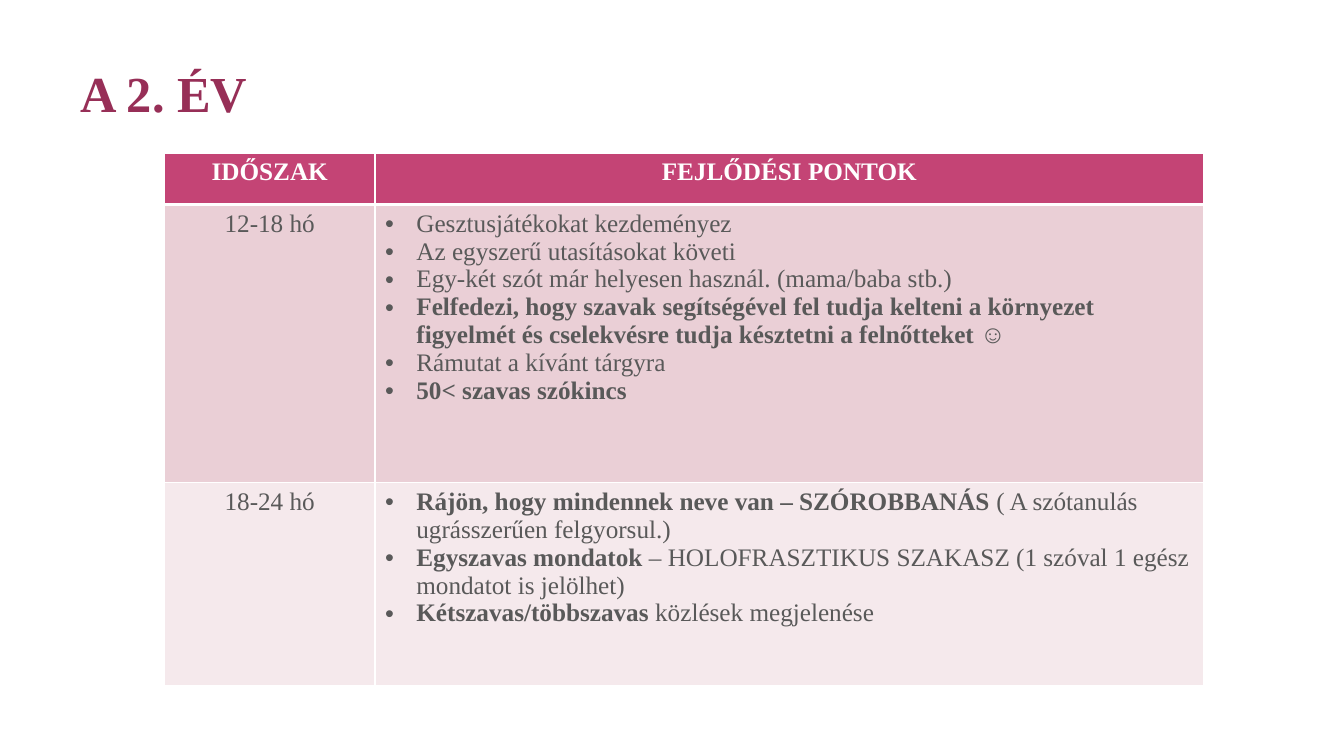
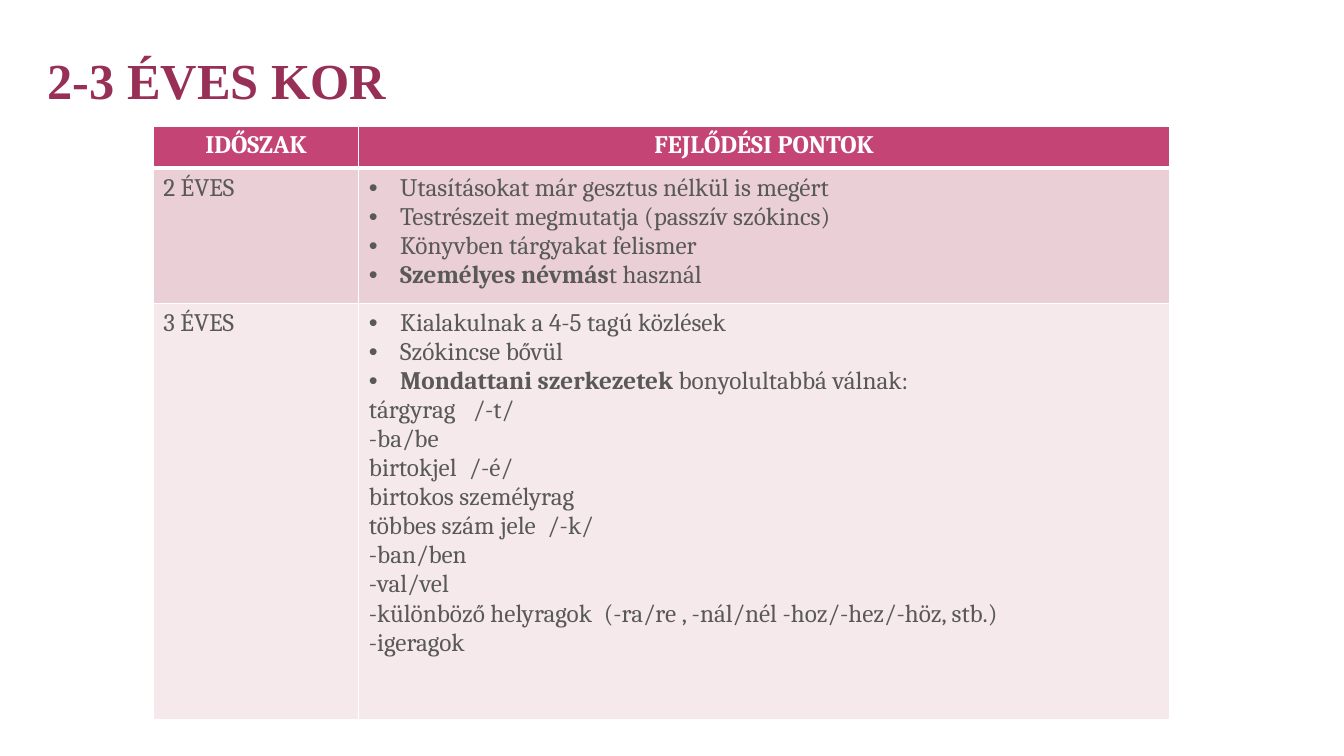
from pptx import Presentation
from pptx.dml.color import RGBColor
from pptx.enum.text import MSO_ANCHOR as Anchor, MSO_AUTO_SIZE as AutoSize, PP_ALIGN as Align
from pptx.oxml.ns import qn
from pptx.util import Inches, Pt
from lxml.etree import SubElement

TITLE_ONLY = 5
SERIF = "Times New Roman"
COLORS = {"title": "972F57", "header": "C44475", "bands": ["EACFD6", "F5E9EC"],
          "text": "595959", "white": "FFFFFF"}
HEADINGS = ["IDŐSZAK", "FEJLŐDÉSI PONTOK"]
INDENT = Inches(0.31)


def rgb(color):
    return RGBColor.from_string(color)


def set_border(cell, side, width):
    """Draw a white line on side L, R, T or B of a cell."""
    line = SubElement(cell._tc.get_or_add_tcPr(), qn(f"a:ln{side}"), w=str(Pt(width)))
    fill = SubElement(line, qn("a:solidFill"))
    SubElement(fill, qn("a:srgbClr"), val=COLORS["white"])


def add_bullet(para):
    properties = para._p.get_or_add_pPr()
    properties.set("marL", str(INDENT))
    properties.set("indent", str(-INDENT))
    SubElement(properties, qn("a:buFont"), typeface="Arial")
    SubElement(properties, qn("a:buChar"), char="•")


def add_tab_stop(para, inches):
    stops = SubElement(para._p.get_or_add_pPr(), qn("a:tabLst"))
    SubElement(stops, qn("a:tab"), pos=str(Inches(inches)), algn="l")


class Deck:
    """The presentation, its style and the current slide; lengths are percent of the slide."""

    def __init__(self):
        self.show = Presentation()
        self.show.slide_width, self.show.slide_height = Inches(13.33), Inches(7.5)

    def across(self, share):
        return round(self.show.slide_width * share / 100)

    def down(self, share):
        return round(self.show.slide_height * share / 100)

    def place(self, left, top, width, height):
        return self.across(left), self.down(top), self.across(width), self.down(height)

    def add_spans(self, para, text, font, size, color, bold=False):
        """Fill a paragraph; ** switches bold on and off."""
        for index, part in enumerate(text.split("**")):
            if part:
                span = para.add_run()
                span.text = part
                style = {"name": font, "size": Pt(size), "bold": bold or index % 2 == 1}
                for key, value in style.items():
                    setattr(span.font, key, value)
                span.font.color.rgb = rgb(color)

    def add_page(self, title, place):
        self.page = self.show.slides.add_slide(self.show.slide_layouts[TITLE_ONLY])
        box = self.page.shapes.title
        box.left, box.top, box.width, box.height = self.place(*place)
        frame = box.text_frame
        frame_style = {"word_wrap": True, "auto_size": AutoSize.NONE,
                       "vertical_anchor": Anchor.BOTTOM}
        for key, value in frame_style.items():
            setattr(frame, key, value)
        para = frame.paragraphs[0]
        para.alignment, para.line_spacing = Align.LEFT, 0.9
        self.add_spans(para, title, SERIF, 36, COLORS["title"], bold=True)

    def fill_cell(self, cell, lines, fill, color, font, align, bold=False):
        cell.fill.solid()
        cell.fill.fore_color.rgb = rgb(fill)
        frame = cell.text_frame
        for index, line in enumerate(lines):
            para = frame.add_paragraph() if index else frame.paragraphs[0]
            text, stop = line if isinstance(line, tuple) else (line, None)
            if text.startswith("• "):
                add_bullet(para)
                text = text[2:]
            if stop:
                add_tab_stop(para, stop)
            para.alignment = align
            self.add_spans(para, text, font, 18, color, bold)

    def add_periods(self, left, top, columns, rows, periods, font, period_align):
        """Add a table with a period and its list of milestones in each row."""
        place = self.place(left, top, sum(columns), sum(rows))
        table = self.page.shapes.add_table(len(rows), len(columns), *place).table
        table.horz_banding = False
        for column, share in zip(table.columns, columns):
            column.width = self.across(share)
        for row, share in zip(table.rows, rows):
            row.height = self.down(share)
        content = [[[heading] for heading in HEADINGS]]
        content += [[[period], points] for period, points in periods]
        for r, line in enumerate(content):
            for c, lines in enumerate(line):
                cell = table.cell(r, c)
                widths = {"L": 1, "R": 1, "T": 3 if r == 1 else 1, "B": 1 if r else 3}
                for side, width in widths.items():
                    set_border(cell, side, width)
                if r == 0:
                    self.fill_cell(cell, lines, COLORS["header"], COLORS["white"], font,
                                   Align.CENTER, bold=True)
                else:
                    self.fill_cell(cell, lines, COLORS["bands"][(r - 1) % 2], COLORS["text"],
                                   font, Align.LEFT if c else period_align)


def main():
    deck = Deck()

    deck.add_page("A 2. ÉV", (5.25, 3.07, 79.58, 13.87))
    deck.add_periods(12.23, 20.27, [15.68, 61.65], [6.8, 36.8, 26.8], [
        ("12-18 hó", [
            "• Gesztusjátékokat kezdeményez",
            "• Az egyszerű utasításokat követi",
            "• Egy-két szót már helyesen használ. (mama/baba stb.)",
            "• **Felfedezi, hogy szavak segítségével fel tudja kelteni a környezet "
            "figyelmét és cselekvésre tudja késztetni a felnőtteket ☺**",
            "• Rámutat a kívánt tárgyra",
            "• **50< szavas szókincs**",
        ]),
        ("18-24 hó", [
            "• **Rájön, hogy mindennek neve van – SZÓROBBANÁS **"
            "( A szótanulás ugrásszerűen felgyorsul.)",
            "• **Egyszavas mondatok **– HOLOFRASZTIKUS SZAKASZ "
            "(1 szóval 1 egész mondatot is jelölhet)",
            "• **Kétszavas/többszavas **közlések megjelenése",
        ]),
    ], SERIF, Align.CENTER)

    deck.add_page("2-3 ÉVES KOR", (2.78, -2, 82.5, 17.33))
    deck.add_periods(11.4, 16.67, [15.3, 60.3], [5.6, 17.87, 55.07], [
        ("2 ÉVES", [
            "• Utasításokat már gesztus nélkül is megért",
            "• Testrészeit megmutatja (passzív szókincs)",
            "• Könyvben tárgyakat felismer",
            "• **Személyes névmás**t használ",
        ]),
        ("3 ÉVES", [
            "• Kialakulnak a 4-5 tagú közlések",
            "• Szókincse bővül",
            "• **Mondattani szerkezetek **bonyolultabbá válnak:",
            ("tárgyrag\t/-t/", 1.03),
            "-ba/be",
            ("birtokjel\t/-é/", 0.99),
            "birtokos személyrag",
            ("többes szám jele\t/-k/", 1.77),
            "-ban/ben",
            "-val/vel",
            ("-különböző helyragok\t(-ra/re , -nál/nél -hoz/-hez/-höz, stb.)", 2.33),
            "-igeragok",
        ]),
    ], "Cambria", Align.LEFT)

    deck.show.save("out.pptx")


if __name__ == "__main__":
    main()
